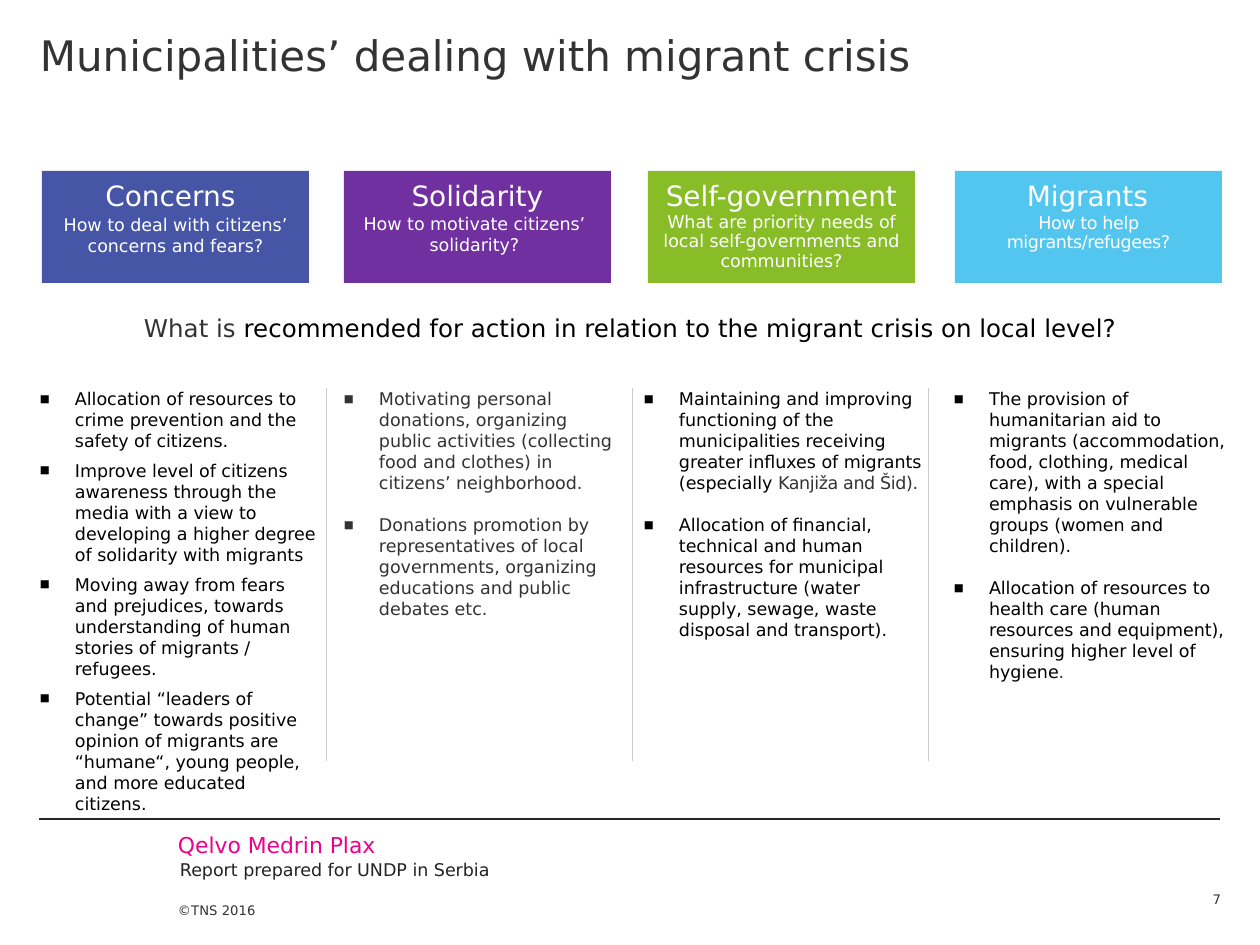
"""Build the slide on how towns deal with the migrant crisis."""
import dataclasses
import typing

import lxml.etree
import pptx
import pptx.dml.color
import pptx.enum.shapes
import pptx.enum.text
import pptx.oxml.ns
import pptx.util

ALIGN = pptx.enum.text.PP_ALIGN
ANCHOR = pptx.enum.text.MSO_ANCHOR
Box = tuple[int, int, int, int]


@dataclasses.dataclass(frozen=True)
class Theme:
    font: str = "DejaVu Sans"
    ink: str = "333333"
    black: str = "000000"
    white: str = "FFFFFF"
    pink: str = "EC008C"
    dark: str = "232323"
    rule: str = "262626"
    pale: str = "CCCCCC"
    title: float = 24
    head: float = 16
    ask: float = 14
    brand: float = 12.5
    body: float = 10
    small: float = 7.5


THEME = Theme()


@dataclasses.dataclass(frozen=True)
class Run:
    text: str
    size: float = THEME.body
    color: str = THEME.black
    track: int = 0


@dataclasses.dataclass(frozen=True)
class Card:
    left: int
    fill: str
    head: str
    head_x: int
    ask: Run
    ask_x: int
    ask_y: int
    lead: typing.Optional[int] = None


@dataclasses.dataclass(frozen=True)
class Column:
    left: int
    width: int
    after: int
    items: tuple[tuple[Run, ...], ...]


CARDS = (
    Card(42, "4655A5", "Concerns", 37,
         Run("How to deal with citizens’ concerns and fears?", color=THEME.white), 42, 204, 12),
    Card(344, "7030A0", "Solidarity", 344,
         Run("How to motivate citizens’ solidarity?", color=THEME.white), 341, 203),
    Card(648, "89BD27", "Self-government", 648,
         Run("What are priority needs of local self-governments and communities?",
             color=THEME.white), 648, 203, 11),
    Card(955, "53C6EF", "Migrants", 954,
         Run("How to help migrants/refugees?", color=THEME.white, track=-20), 955, 204, 11),
)

COLUMNS = (
    Column(40, 279, 5, (
        (Run("Allocation of resources to crime prevention and the safety of citizens."),),
        (Run("Improve level of citizens awareness through the media with a view to "
             "developing a higher degree of solidarity with migrants"),),
        (Run("Moving away from fears and prejudices, towards understanding of human "
             "stories of migrants / refugees."),),
        (Run("Potential “leaders of change” towards positive opinion of migrants are "
             "“humane“, young people, and more educated citizens."),),
    )),
    Column(344, 276, 12, (
        (Run("Motivating personal donations, organizing public activities (collecting "
             "food and clothes) in citizens’ neighborhood.", color=THEME.ink),),
        (Run("Donations promotion by representatives of local governments, organizing "
             "educations and public debates etc.", color=THEME.ink),),
    )),
    Column(644, 279, 12, (
        (Run("Maintaining and improving functioning of the municipalities receiving "
             "greater influxes of migrants (especially "),
         Run("Kanjiža and Šid).", color=THEME.ink, track=-20)),
        (Run("Allocation of financial, technical and human resources for municipal "
             "infrastructure (water supply, sewage, waste disposal and transport)."),),
    )),
    Column(954, 282, 12, (
        (Run("The provision of humanitarian aid to migrants (accommodation, food, "
             "clothing, medical care), with a special emphasis on vulnerable groups "
             "(women and children)."),),
        (Run("Allocation of resources to health care (human resources and equipment), "
             "ensuring higher level of hygiene"), Run(".", color=THEME.ink)),
    )),
)


def px(count: float) -> pptx.util.Emu:
    return pptx.util.Emu(round(count * 914400 / 126))


def rgb(code: str) -> pptx.dml.color.RGBColor:
    return pptx.dml.color.RGBColor.from_string(code)


def put(thing: typing.Any, form: dict[str, typing.Any]) -> None:
    for name, value in form.items():
        setattr(thing, name, value)


def mark(para: typing.Any) -> None:
    props = para._p.get_or_add_pPr()
    props.set("marL", str(px(35)))
    props.set("indent", str(-px(35)))
    for tag, name, value in (("a:buSzPct", "val", "60000"),
                             ("a:buFont", "typeface", THEME.font),
                             ("a:buChar", "char", "■")):
        lxml.etree.SubElement(props, pptx.oxml.ns.qn(tag)).set(name, value)


def write(slide: typing.Any, box: Box, paras: typing.Sequence[typing.Sequence[Run]],
          form: typing.Optional[dict[str, typing.Any]] = None, top: int = 0,
          base: int = 0, anchor: typing.Any = ANCHOR.TOP, dots: bool = False) -> None:
    frame = slide.shapes.add_textbox(*map(px, box)).text_frame
    put(frame, {"word_wrap": True, "vertical_anchor": anchor, "margin_left": 0,
                "margin_right": 0, "margin_top": px(top), "margin_bottom": px(base)})
    for spot, runs in enumerate(paras):
        para = frame.add_paragraph() if spot else frame.paragraphs[0]
        if dots:
            mark(para)
        put(para, form or {})
        for item in runs:
            run = para.add_run()
            run.text = item.text
            put(run.font, {"name": THEME.font, "size": pptx.util.Pt(item.size)})
            run.font.color.rgb = rgb(item.color)
            if item.track:
                run._r.get_or_add_rPr().set("spc", str(item.track))


def rule(slide: typing.Any, start: tuple[int, int], end: tuple[int, int],
         color: str, width: float) -> None:
    line = slide.shapes.add_connector(
        pptx.enum.shapes.MSO_CONNECTOR.STRAIGHT, *map(px, start + end))
    line.line.color.rgb = rgb(color)
    line.line.width = pptx.util.Pt(width)
    lxml.etree.SubElement(line._element.spPr, pptx.oxml.ns.qn("a:effectLst"))


def draw_card(slide: typing.Any, card: Card) -> None:
    box = slide.shapes.add_shape(pptx.enum.shapes.MSO_SHAPE.RECTANGLE,
                                 *map(px, (card.left, 171, 267, 112)))
    box.shadow.inherit = False
    box.fill.solid()
    box.fill.fore_color.rgb = rgb(card.fill)
    box.line.fill.background()
    form = {"alignment": ALIGN.CENTER}
    write(slide, (card.head_x, 168, 267, 58),
          [[Run(card.head, THEME.head, THEME.white)]], form, 10, 6)
    if card.lead:
        form["line_spacing"] = pptx.util.Pt(card.lead)
    write(slide, (card.ask_x, card.ask_y, 267, 71), [[card.ask]], form, 10, 6)


def draw_list(slide: typing.Any, col: Column) -> None:
    write(slide, (col.left, 388, col.width, 430), col.items,
          {"space_after": pptx.util.Pt(col.after)}, dots=True)


def main() -> None:
    deck = pptx.Presentation()
    put(deck, {"slide_width": px(1260), "slide_height": px(945)})
    slide = deck.slides.add_slide(deck.slide_layouts[6])
    write(slide, (40, 0, 1208, 142),
          [[Run("Municipalities’ dealing with migrant crisis", THEME.title, THEME.ink)]], top=29)
    for card in CARDS:
        draw_card(slide, card)
    write(slide, (40, 306, 1181, 73),
          [[Run("What is ", THEME.ask, THEME.ink),
            Run("recommended for action in relation to the migrant crisis on local level?",
                THEME.ask)]], {"alignment": ALIGN.CENTER}, 7, 7)
    for col in COLUMNS:
        draw_list(slide, col)
    for left in (326, 632, 928):
        rule(slide, (left, 388), (left, 761), THEME.pale, 0.25)
    rule(slide, (39, 819), (1220, 819), THEME.rule, 0.75)
    write(slide, (178, 832, 417, 26), [[Run("Qelvo Medrin Plax", THEME.brand, THEME.pink)]])
    write(slide, (180, 859, 858, 22),
          [[Run("Report prepared for UNDP in Serbia", color=THEME.dark)]])
    write(slide, (178, 872, 105, 73), [[Run("©TNS 2016", THEME.small, THEME.ink)]],
          base=37, anchor=ANCHOR.BOTTOM)
    write(slide, (1152, 872, 69, 35), [[Run("7", THEME.small, THEME.ink)]],
          {"alignment": ALIGN.RIGHT}, anchor=ANCHOR.BOTTOM)
    deck.save("out.pptx")


if __name__ == "__main__":
    main()
